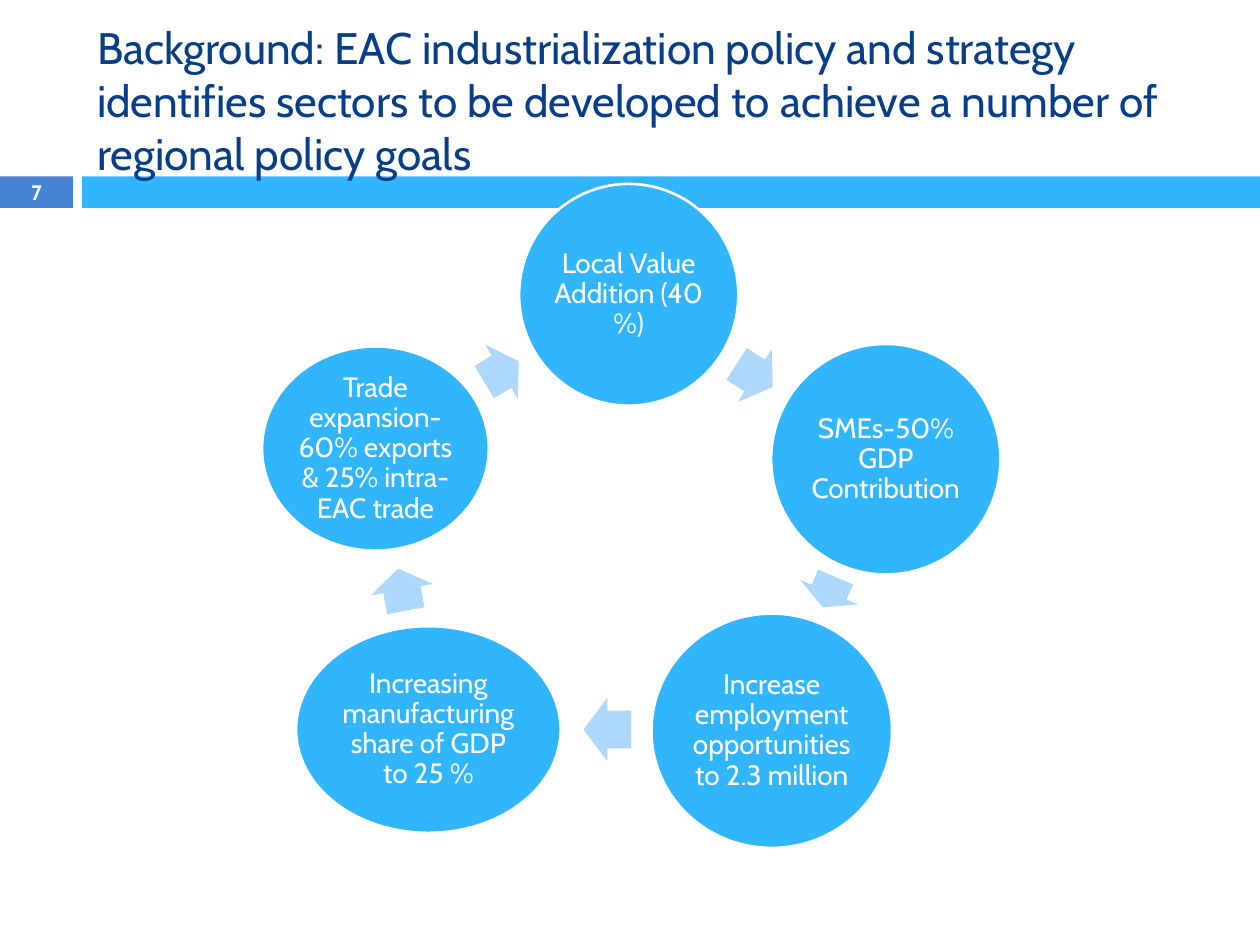
import pptx
import pptx.util
import pptx.dml.color
import pptx.enum.shapes
import pptx.enum.text

Inches = pptx.util.Inches
Kind = pptx.enum.shapes.MSO_SHAPE
Align = pptx.enum.text.PP_ALIGN
Anchor = pptx.enum.text.MSO_ANCHOR

SKY, PALE, STEEL, NAVY, WHITE = "31B6FD", "AED7FE", "4584D3", "073E87", "FFFFFF"

GOALS = [
    ("Local Value Addition (40 %)", (4.12, 1.46, 1.74, 1.76)),
    ("SMEs-50% GDP Contribution", (6.12, 2.73, 1.82, 1.83)),
    ("Increase employment opportunities to 2.3 million", (5.17, 4.87, 1.91, 1.86)),
    ("Increasing manufacturing share of GDP to 25 %", (2.35, 4.97, 2.1, 1.64)),
    ("Trade expansion- 60% exports & 25% intra-EAC trade", (2.08, 2.75, 1.8, 1.62)),
]
ARROWS = [
    ((5.82, 2.73, 0.34, 0.5), 32.6),
    ((6.45, 4.45, 0.26, 0.5), 113),
    ((4.63, 5.54, 0.38, 0.5), 180),
    ((3.02, 4.43, 0.34, 0.5), 259.5),
    ((3.82, 2.7, 0.32, 0.5), 328.8),
]


def color(target, value):
    """Give a fill, line or font colour format a hex colour."""
    target.rgb = pptx.dml.color.RGBColor.from_string(value)


def apply(target, values):
    """Set each attribute named in a dict of format values."""
    for name, value in values.items():
        setattr(target, name, value)


def write(shape, text, size, tone, align=Align.CENTER, inset=None, space=None, bold=False):
    """Fill a shape with one formatted paragraph."""
    frame = shape.text_frame
    frame.text = text
    apply(frame, {"word_wrap": True, "vertical_anchor": Anchor.MIDDLE,
                  "auto_size": pptx.enum.text.MSO_AUTO_SIZE.NONE})
    if inset is not None:
        sides = ("left", "top", "right", "bottom")
        apply(frame, {f"margin_{side}": Inches(inset) for side in sides})
    line = frame.paragraphs[0]
    apply(line, {"alignment": align, "line_spacing": space})
    font = line.runs[0].font
    apply(font, {"name": "Cabin", "size": pptx.util.Pt(size), "bold": bold})
    color(font.color, tone)


def draw(slide, kind, box, fill, edge=None):
    """Add a filled preset shape, outlined if an edge colour is given."""
    shape = slide.shapes.add_shape(kind, *map(Inches, box))
    shape.shadow.inherit = False
    shape.fill.solid()
    color(shape.fill.fore_color, fill)
    if edge:
        shape.line.width = pptx.util.Pt(1.5)
        color(shape.line.color, edge)
    else:
        shape.line.fill.background()
    return shape


def header(slide):
    """Place the title above the band and the number at its left end."""
    title = slide.shapes.title
    box = map(Inches, (0.67, 0.25, 8.92, 1.08))
    apply(title, dict(zip(("left", "top", "width", "height"), box)))
    write(title, "Background: EAC industrialization policy and strategy identifies "
          "sectors to be developed to achieve a number of regional policy goals",
          25.2, NAVY, Align.LEFT)
    number = draw(slide, Kind.RECTANGLE, (0, 1.4, 0.58, 0.25), STEEL)
    write(number, "7", 11.9, WHITE, inset=0, bold=True)
    draw(slide, Kind.RECTANGLE, (0.65, 1.4, 9.35, 0.25), SKY)
    tree = title.element.getparent()
    tree.append(title.element)


def cycle(slide):
    """Draw the ring of goals, each followed by its arrow."""
    for (text, box), (place, turn) in zip(GOALS, ARROWS):
        goal = draw(slide, Kind.OVAL, box, SKY, WHITE)
        write(goal, text, 16, WHITE, inset=0.02, space=0.9)
        arrow = draw(slide, Kind.RIGHT_ARROW, place, PALE)
        arrow.rotation = turn
        arrow.adjustments[0], arrow.adjustments[1] = 0.6, 0.5


def main():
    """Build and save the slide."""
    deck = pptx.Presentation()
    apply(deck, {"slide_width": Inches(10), "slide_height": Inches(7.5)})
    slide = deck.slides.add_slide(deck.slide_layouts[5])
    header(slide)
    cycle(slide)
    deck.save("out.pptx")


if __name__ == "__main__":
    main()
